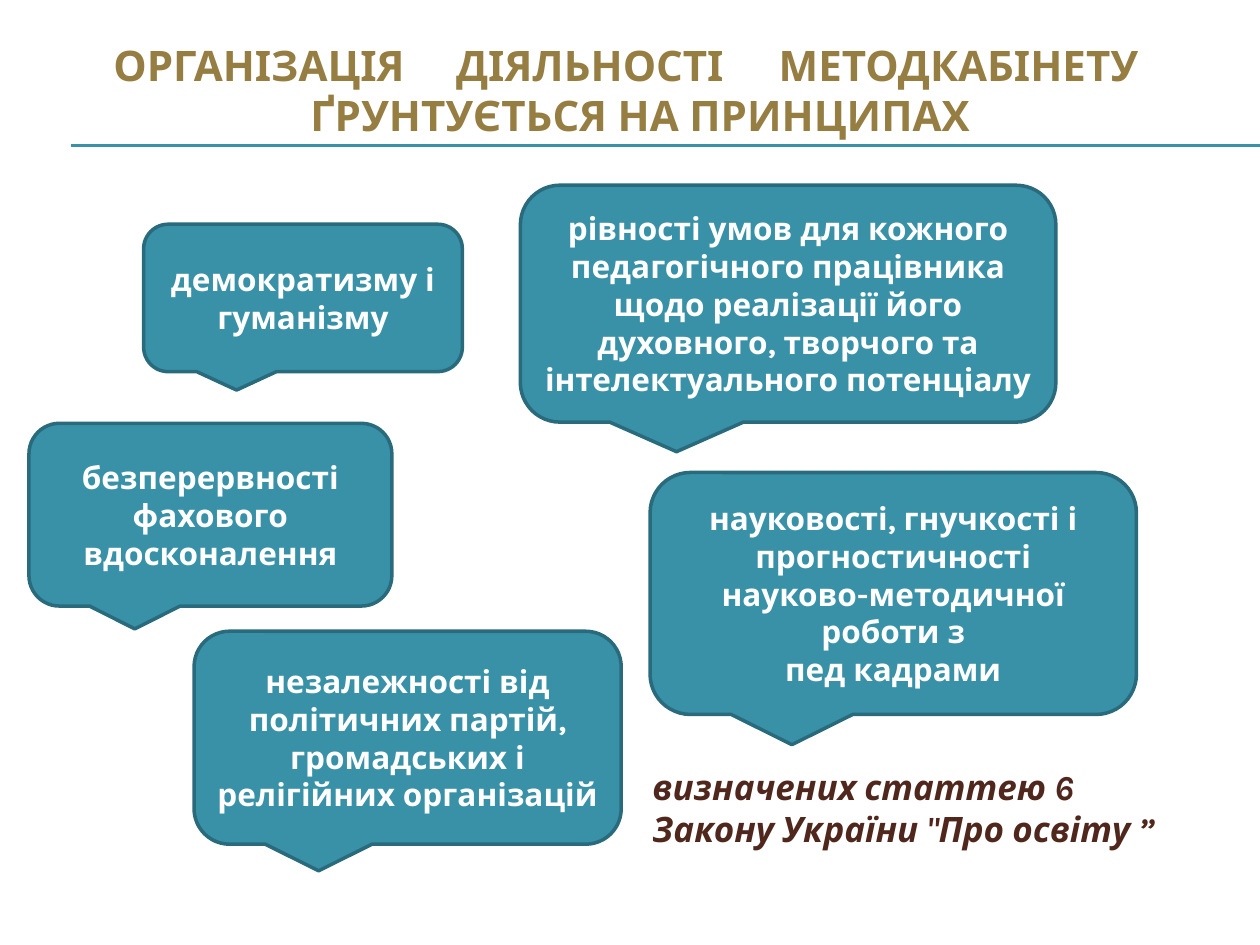
from lxml.etree import SubElement
from pptx import Presentation
from pptx.dml.color import RGBColor as Color
from pptx.enum.shapes import MSO_CONNECTOR as Connector, MSO_SHAPE as Preset
from pptx.enum.text import MSO_ANCHOR as Anchor, PP_ALIGN as Align
from pptx.oxml.ns import qn
from pptx.util import Inches, Pt

COLORS = {"title": "967D42", "teal": "3891A7", "border": "296B7C",
          "white": "FFFFFF", "brown": "4F271C"}
FONT = "Karla"

presentation = Presentation()
presentation.slide_width, presentation.slide_height = Inches(10), Inches(7.5)
slide = presentation.slides.add_slide(presentation.slide_layouts[6])
CELL = presentation.slide_width / 100


def grid(*cells):
    return [round(cell * CELL) for cell in cells]


def write(frame, lines, size, color, align, italic=False):
    frame.word_wrap = True
    for index, line in enumerate(lines):
        paragraph = frame.paragraphs[0] if index == 0 else frame.add_paragraph()
        paragraph.alignment = align
        run = paragraph.add_run()
        run.text = line
        run.font.name, run.font.size = FONT, Pt(size)
        run.font.bold, run.font.italic = True, italic
        run.font.color.rgb = Color.from_string(COLORS[color])


for row in (11.5, 11.6):
    rule = slide.shapes.add_connector(Connector.STRAIGHT, *grid(5.6, row, 100, row))
    rule.line.color.rgb = Color.from_string(COLORS["teal"])
    rule.line.width = Pt(0.75)
    SubElement(rule._element.spPr, qn("a:effectLst"))

title = slide.shapes.add_textbox(*grid(3.3, 0, 95, 14.2)).text_frame
title.vertical_anchor = Anchor.MIDDLE
title.margin_left, title.margin_right = grid(5.7, 5.7)
heading = title.paragraphs[0]
tabs = SubElement(heading._p.get_or_add_pPr(), qn("a:tabLst"))
for position in grid(27.2, 52.8):
    SubElement(tabs, qn("a:tab"), pos=str(position), algn="l")
write(title, ["ОРГАНІЗАЦІЯ\tДІЯЛЬНОСТІ\tМЕТОДКАБІНЕТУ", "ҐРУНТУЄТЬСЯ НА ПРИНЦИПАХ"],
      24, "title", Align.CENTER)
heading.alignment = Align.LEFT

principles = [
    (51.6, 37.5, 38.6, 19.2, 1.5,
     ["науковості, гнучкості і прогностичності науково-методичної роботи з", "пед кадрами"]),
    (15.4, 50.1, 33.9, 16.9, 1,
     ["незалежності від політичних партій, громадських і релігійних організацій"]),
    (41.3, 14.7, 42.5, 18.8, 1,
     ["рівності умов для кожного педагогічного працівника щодо реалізації його "
      "духовного, творчого та інтелектуального потенціалу"]),
    (2.3, 33.6, 28.8, 14.5, 1, ["безперервності фахового вдосконалення"]),
    (11.4, 17.8, 25.3, 11.7, 1, ["демократизму і гуманізму"]),
]
for left, top, width, height, inset, lines in principles:
    callout = slide.shapes.add_shape(Preset.ROUNDED_RECTANGULAR_CALLOUT,
                                     *grid(left, top, width, height))
    callout.shadow.inherit = False
    callout.fill.solid()
    callout.fill.fore_color.rgb = Color.from_string(COLORS["teal"])
    callout.line.color.rgb = Color.from_string(COLORS["border"])
    callout.line.width = Pt(2)
    frame = callout.text_frame
    frame.vertical_anchor = Anchor.MIDDLE
    frame.margin_left, frame.margin_right = grid(inset, inset)
    write(frame, lines, 18, "white", Align.CENTER)

law = slide.shapes.add_textbox(*grid(50.8, 60.3, 49.2, 7.7))
write(law.text_frame, ["визначених статтею 6", "Закону України \"Про освіту ”"],
      20, "brown", Align.LEFT, italic=True)

presentation.save("out.pptx")
